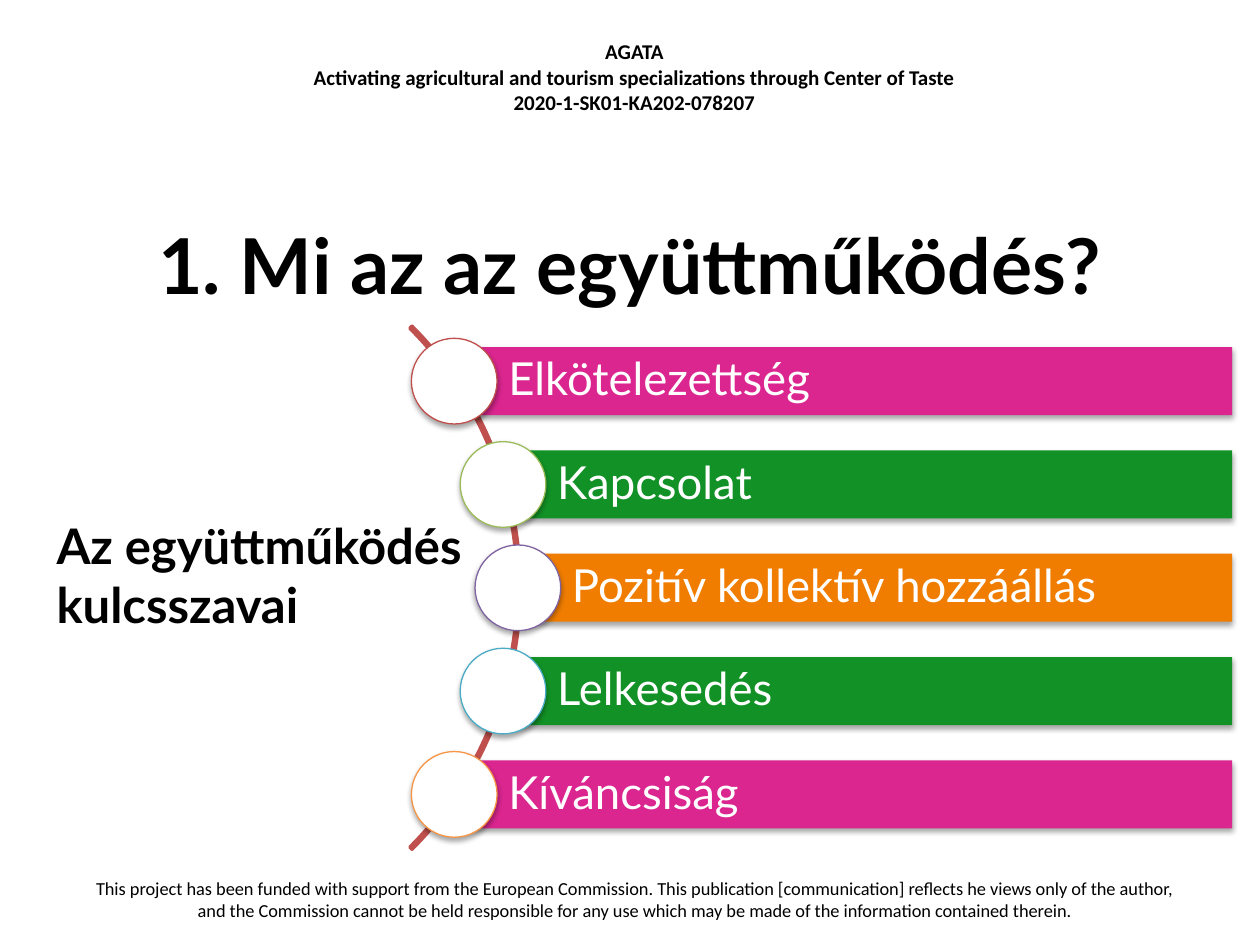
import math
from lxml import etree
from pptx import Presentation
from pptx import util as u
from pptx.dml import color
from pptx.enum import shapes, text
from pptx.oxml import ns

Inches = u.Inches
HUES = {
    "ink": "000000", "white": "FFFFFF", "arc": "C0504D",
    "pink": "DB2690", "green": "129126", "orange": "F07D00",
    "red": "C0504D", "lime": "9BBB59", "plum": "8064A2",
    "aqua": "4BACC6", "gold": "F79646",
}
WORDS = [
    ("Elkötelezettség", "pink", "red"),
    ("Kapcsolat", "green", "lime"),
    ("Pozitív kollektív hozzáállás", "orange", "plum"),
    ("Lelkesedés", "green", "aqua"),
    ("Kíváncsiság", "pink", "gold"),
]
HEAD = ("AGATA\n"
        "Activating agricultural and tourism specializations through Center of Taste\n"
        "2020-1-SK01-KA202-078207")
FOOT = ("This project has been funded with support from the European Commission. "
        "This publication [communication] reflects he views only of the author, "
        "and the Commission cannot be held responsible for any use which may be "
        "made of the information contained therein.")


def hue(name):
    return color.RGBColor.from_string(HUES[name])


def place(box):
    return [Inches(n) for n in box]


def style(frame, words, size, font, tone="ink", bold=False,
          align=text.PP_ALIGN.LEFT):
    frame.text = words
    frame.word_wrap = True
    for para in frame.paragraphs:
        para.alignment = align
        for run in para.runs:
            run.font.size = u.Pt(size)
            run.font.name = font
            run.font.bold = bold
            run.font.color.rgb = hue(tone)


def add_note(slide, box, words, size, font, **look):
    note = slide.shapes.add_textbox(*place(box))
    style(note.text_frame, words, size, font, **look)


def add_title(slide, box, words):
    title = slide.shapes.title
    title.left, title.top, title.width, title.height = place(box)
    style(title.text_frame, words, 44, "Lato", bold=True,
          align=text.PP_ALIGN.CENTER)
    title.text_frame.vertical_anchor = text.MSO_ANCHOR.MIDDLE


def add_shade(shape):
    shape.shadow.inherit = False
    effect = shape._element.spPr.find(ns.qn("a:effectLst"))
    shade = etree.SubElement(effect, ns.qn("a:outerShdw"), blurRad=str(u.Pt(3.1)),
                             dist=str(u.Pt(1.8)), dir="5400000", rotWithShape="0")
    tone = etree.SubElement(shade, ns.qn("a:srgbClr"), val=HUES["ink"])
    etree.SubElement(tone, ns.qn("a:alpha"), val="35000")


def add_arc(slide, box):
    arc = slide.shapes.add_shape(shapes.MSO_SHAPE.BLOCK_ARC, *place(box))
    for i, value in enumerate((189, 27, 0.004)):
        arc.adjustments[i] = value
    arc.shadow.inherit = False
    arc.fill.background()
    arc.line.color.rgb = hue("arc")
    arc.line.width = u.Pt(2)


def add_bar(slide, box, words, fill):
    bar = slide.shapes.add_shape(shapes.MSO_SHAPE.RECTANGLE, *place(box))
    add_shade(bar)
    bar.fill.solid()
    bar.fill.fore_color.rgb = hue(fill)
    bar.line.fill.background()
    frame = bar.text_frame
    style(frame, words, 26, "Lato", tone="white")
    frame.vertical_anchor = text.MSO_ANCHOR.MIDDLE
    frame.margin_left = Inches(0.43)
    frame.margin_right = frame.margin_top = frame.margin_bottom = Inches(0.07)
    frame.paragraphs[0].line_spacing = 0.9


def add_dot(slide, box, edge):
    dot = slide.shapes.add_shape(shapes.MSO_SHAPE.OVAL, *place(box))
    add_shade(dot)
    dot.fill.solid()
    dot.fill.fore_color.rgb = hue("white")
    dot.line.color.rgb = hue(edge)
    dot.line.width = u.Pt(0.75)


def add_list(slide, box, right):
    left, top, width, height = box
    add_arc(slide, box)
    mid_x, mid_y = left + width / 2, top + height / 2
    reach = width / 2 - 0.02
    step, thick, size = 0.82, 0.54, 0.68
    for i, (words, fill, edge) in enumerate(WORDS):
        drop = (i - len(WORDS) // 2) * step
        x = mid_x + math.sqrt(reach ** 2 - drop ** 2)
        y = mid_y + drop
        add_bar(slide, (x, y - thick / 2, right - x, thick), words, fill)
        add_dot(slide, (x - size / 2, y - size / 2, size, size), edge)


def main():
    deck = Presentation()
    deck.slide_width, deck.slide_height = Inches(10), Inches(7.5)
    slide = deck.slides.add_slide(deck.slide_layouts[5])
    mid = text.PP_ALIGN.CENTER
    add_note(slide, (2.08, 0.26, 5.91, 0.71), HEAD, 12, "Calibri",
             bold=True, align=mid)
    add_note(slide, (0.54, 6.91, 9, 0.47), FOOT, 10.5, "Calibri", align=mid)
    add_title(slide, (0.5, 1.47, 9, 1.25), "1. Mi az az együttműködés?")
    add_note(slide, (0.35, 4.04, 3.95, 1.25), "Az együttműködés kulcsszavai",
             28, "Lato", bold=True)
    add_list(slide, (-1.74, 1.73, 5.87, 5.87), 9.78)
    deck.save("out.pptx")


if __name__ == "__main__":
    main()
